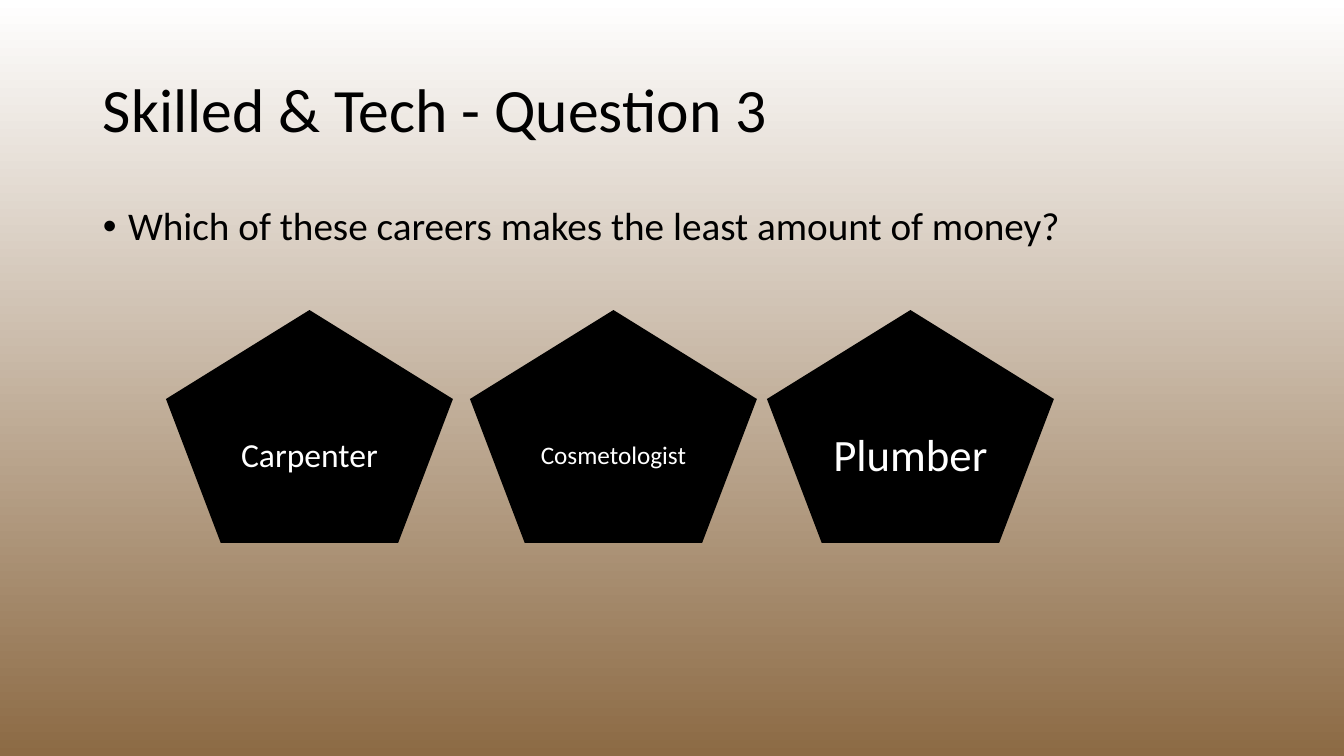
import dataclasses

import lxml.etree
import pptx
import pptx.dml.color
import pptx.enum.shapes
import pptx.enum.text
import pptx.oxml.ns
import pptx.util

EMU_PER_PX = 914400 / 100.8


@dataclasses.dataclass(frozen=True)
class Theme:
    font: str = "Calibri"
    text: str = "000000"
    answer_fill: str = "000000"
    answer_text: str = "FFFFFF"
    background: tuple = ("FFFFFF", "8C6A44")
    title_size: int = 44
    question_size: int = 28


def px(length):
    return pptx.util.Emu(round(length * EMU_PER_PX))


def rgb(value):
    return pptx.dml.color.RGBColor.from_string(value)


class QuizSlide:
    def __init__(self, presentation, theme):
        self.theme = theme
        self.slide = presentation.slides.add_slide(presentation.slide_layouts[6])

    def background(self):
        fill = self.slide.background.fill
        fill.gradient()
        fill.gradient_angle = 270  # counter-clockwise: top to bottom
        for stop, color in zip(fill.gradient_stops, self.theme.background):
            stop.color.rgb = rgb(color)

    def add_run(self, shape, text, size, color, anchor):
        frame = shape.text_frame
        frame.word_wrap = True
        frame.vertical_anchor = anchor
        paragraph = frame.paragraphs[0]
        run = paragraph.add_run()
        run.text = text
        run.font.name = self.theme.font
        run.font.size = pptx.util.Pt(size)
        run.font.color.rgb = rgb(color)
        return paragraph

    def text(self, box, text, size, anchor):
        shape = self.slide.shapes.add_textbox(*map(px, box))
        paragraph = self.add_run(shape, text, size, self.theme.text, anchor)
        paragraph.line_spacing = 0.9
        return paragraph

    def bullet(self, box, text, size):
        paragraph = self.text(box, text, size, pptx.enum.text.MSO_ANCHOR.TOP)
        paragraph.space_before = pptx.util.Pt(10)
        indent = pptx.util.Inches(0.25)
        properties = paragraph._p.get_or_add_pPr()
        properties.set("marL", str(indent))
        properties.set("indent", str(-indent))
        for tag, attribute, value in (("a:buFont", "typeface", "Arial"),
                                      ("a:buChar", "char", "•")):
            element = lxml.etree.SubElement(properties, pptx.oxml.ns.qn(tag))
            element.set(attribute, value)

    def pentagon(self, box, text, size):
        shape = self.slide.shapes.add_shape(
            pptx.enum.shapes.MSO_SHAPE.REGULAR_PENTAGON, *map(px, box))
        shape.shadow.inherit = False
        shape.fill.solid()
        shape.fill.fore_color.rgb = rgb(self.theme.answer_fill)
        shape.line.fill.background()
        paragraph = self.add_run(shape, text, size, self.theme.answer_text,
                                 pptx.enum.text.MSO_ANCHOR.MIDDLE)
        paragraph.alignment = pptx.enum.text.PP_ALIGN.CENTER


def main():
    presentation = pptx.Presentation()
    presentation.slide_width = px(1344)
    presentation.slide_height = px(756)
    theme = Theme()
    quiz = QuizSlide(presentation, theme)
    quiz.background()

    # Title and question
    quiz.text((93, 40, 1159, 146), "Skilled & Tech - Question 3",
              theme.title_size, pptx.enum.text.MSO_ANCHOR.MIDDLE)
    quiz.bullet((93, 202, 1159, 480),
                "Which of these careers makes the least amount of money?",
                theme.question_size)

    # Answers, from back to front
    for left, career, size in ((767, "Plumber", 32),
                               (470, "Cosmetologist", 18),
                               (166, "Carpenter", 24)):
        quiz.pentagon((left, 310, 287, 233), career, size)

    presentation.save("out.pptx")


if __name__ == "__main__":
    main()
